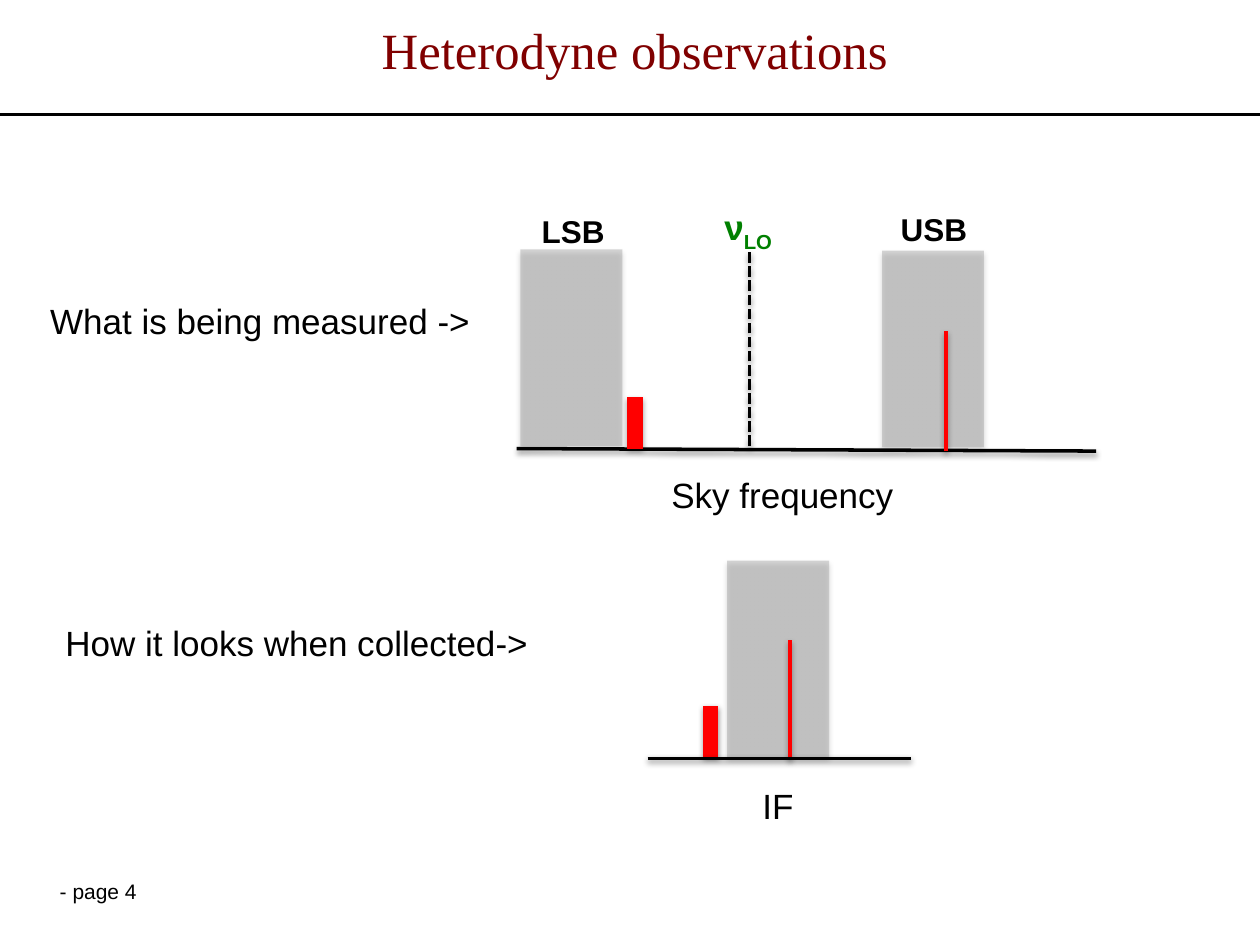
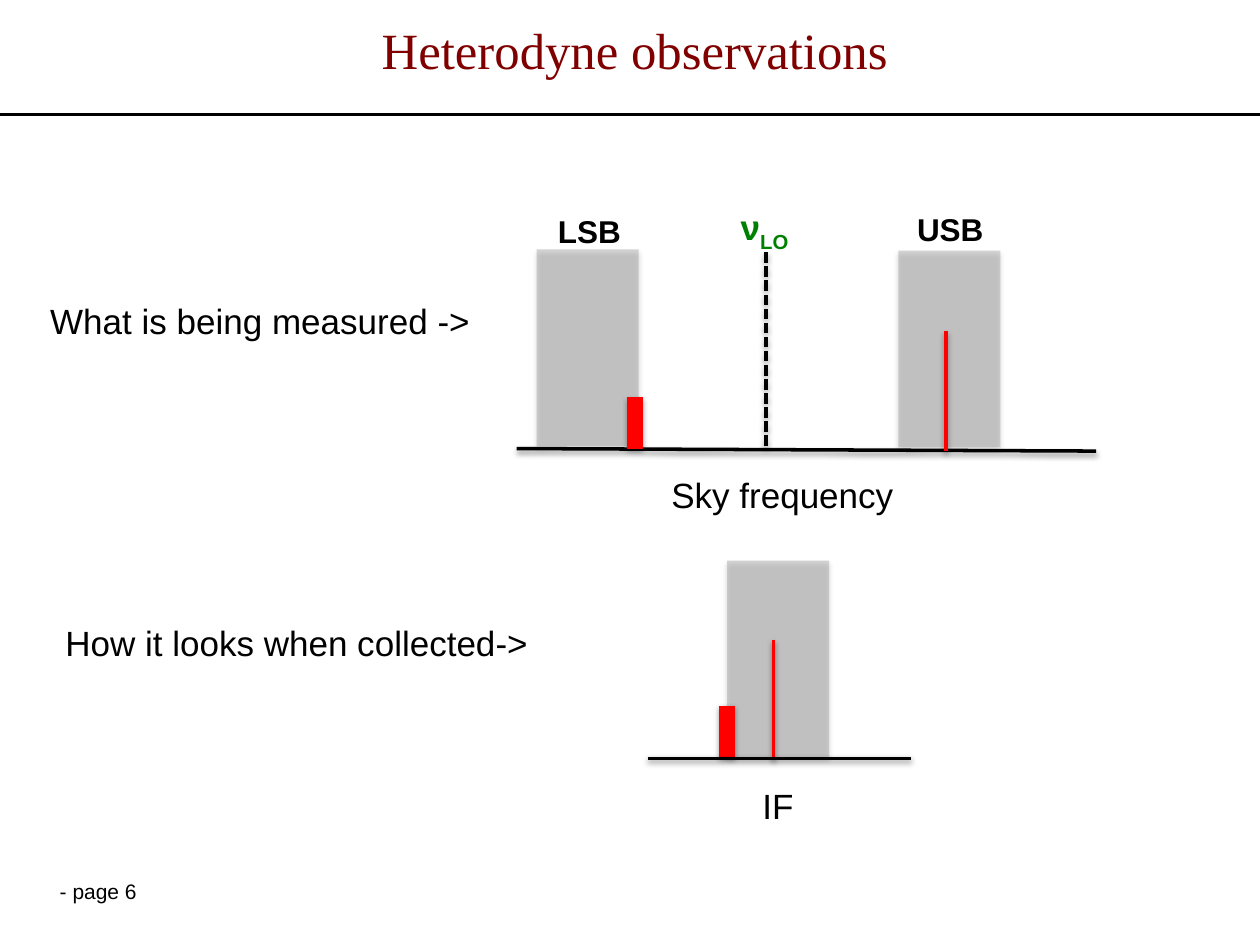
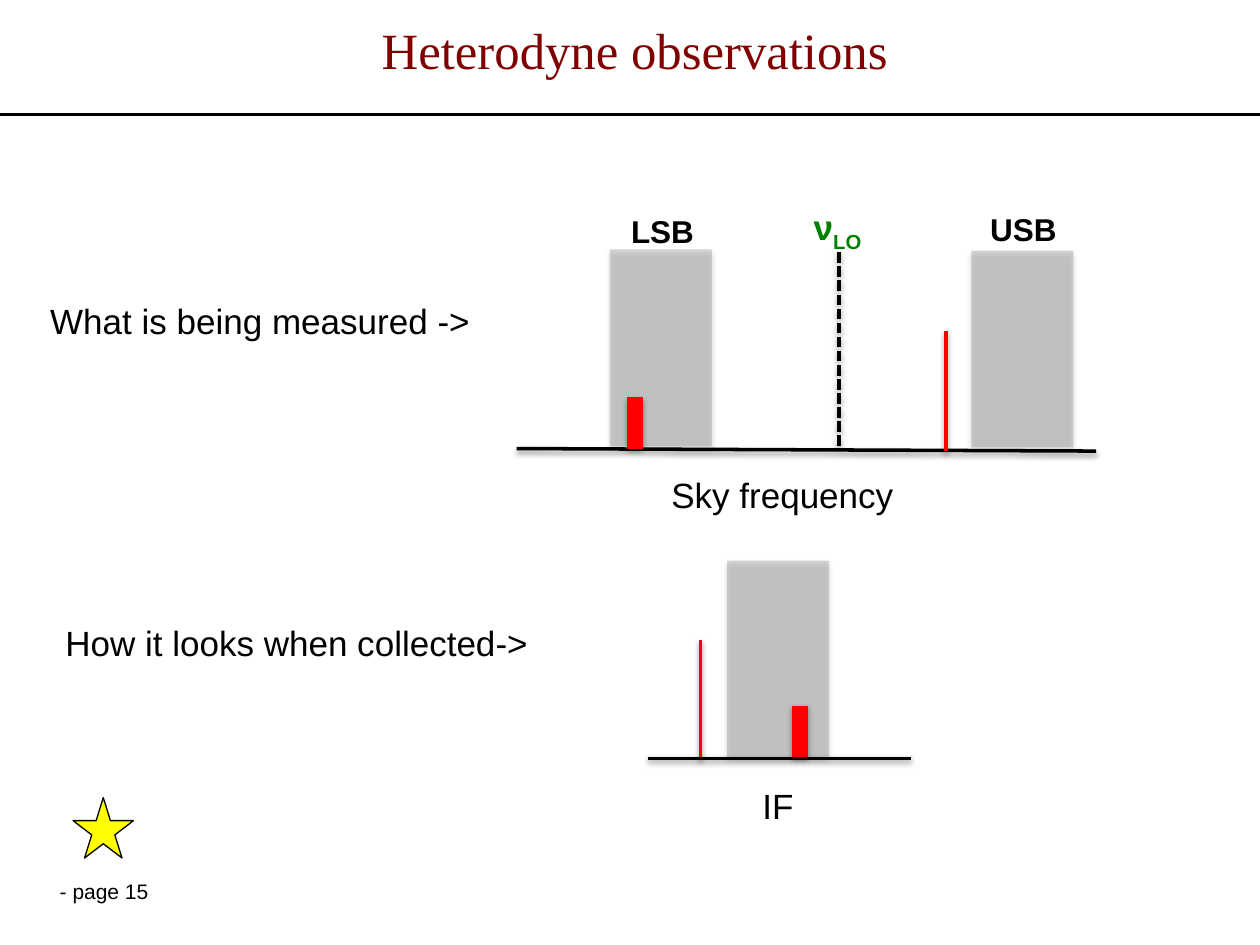
"""Build three slides that step a heterodyne receiver through local oscillator settings."""
from typing import NamedTuple

from lxml.etree import SubElement
from pptx import Presentation
from pptx.dml.color import RGBColor
from pptx.enum.dml import MSO_LINE
from pptx.enum.shapes import MSO_CONNECTOR as Connector, MSO_SHAPE as Preset
from pptx.enum.text import MSO_ANCHOR as Anchor, MSO_AUTO_SIZE as AutoSize, PP_ALIGN as Align
from pptx.oxml.ns import qn
from pptx.util import Inches, Pt

BLACK = RGBColor(0x00, 0x00, 0x00)
RED = RGBColor(0xFF, 0x00, 0x00)
GREEN = RGBColor(0x00, 0x80, 0x00)
MAROON = RGBColor(0x80, 0x00, 0x00)
GREY = RGBColor(0xA6, 0xA6, 0xA6)
YELLOW = RGBColor(0xFF, 0xFF, 0x00)
BODY_FONT = "Arial"
TITLE_FONT = "Times New Roman"
TITLE_ONLY = 5
BAND_WIDTH, BAND_HEIGHT = 0.81, 1.56


class Label(NamedTuple):
    text: str
    left: float
    top: float
    width: float
    height: float = 0.44
    size: int = 20
    color: RGBColor = BLACK
    bold: bool = False
    align: Align = Align.LEFT
    wrap: bool = False


class Stroke(NamedTuple):
    x1: float
    y1: float
    x2: float
    y2: float
    color: RGBColor = BLACK
    width: float = 2
    dashed: bool = False
    shadow: bool = True


class Tuning(NamedTuple):
    page: int
    shift: float
    starred: bool = False


TUNINGS = [Tuning(4, 0), Tuning(6, 0.13), Tuning(15, 0.71, starred=True)]

CAPTIONS = [
    Label("What is being measured ->", 0.3, 2.33, 3.56),
    Label("How it looks when collected->", 0.42, 4.88, 3.9),
    Label("IF", 5.75, 6.18, 0.85, align=Align.CENTER, wrap=True),
    Label("Sky frequency", 4.23, 3.71, 3.96, align=Align.CENTER, wrap=True),
]
SIDEBAND_LABELS = [
    Label("LSB", 4.2, 1.63, 0.71, 0.4, 18, bold=True),
    Label("USB", 7.05, 1.62, 0.73, 0.4, 18, bold=True),
]
OSCILLATOR_LABEL = Label("ν", 5.65, 1.58, 0.81, color=GREEN, bold=True, wrap=True)
OSCILLATOR = Stroke(5.95, 3.54, 5.95, 1.98, dashed=True)
SKY_AXIS = Stroke(4.1, 3.56, 8.7, 3.58)
IF_AXIS = Stroke(5.14, 6.02, 7.23, 6.02)
HEADER_RULE = Stroke(0, 0.91, 10, 0.91, width=1.5, shadow=False)


def style_run(run, size: int, color: RGBColor, font: str = BODY_FONT, bold: bool = False) -> None:
    """Give a run its font, size, weight and colour."""
    run.font.name = font
    run.font.size = Pt(size)
    run.font.bold = bold
    run.font.color.rgb = color


def set_effects(shape, opacity: int = 0, distance: int = 0) -> None:
    """Replace the theme effects by a soft drop shadow, or by none."""
    effects = SubElement(shape._element.spPr, qn("a:effectLst"))
    if opacity:
        shadow = SubElement(effects, qn("a:outerShdw"), blurRad="40000", dist=str(distance),
                            dir="5400000", rotWithShape="0")
        color = SubElement(shadow, qn("a:srgbClr"), val=str(BLACK))
        SubElement(color, qn("a:alpha"), val=str(opacity * 1000))


def add_label(shapes, label: Label):
    """Draw a label and return its paragraph."""
    box = shapes.add_textbox(Inches(label.left), Inches(label.top),
                             Inches(label.width), Inches(label.height))
    frame = box.text_frame
    frame.text = label.text
    frame.word_wrap = label.wrap
    frame.auto_size = AutoSize.SHAPE_TO_FIT_TEXT
    paragraph = frame.paragraphs[0]
    paragraph.alignment = label.align
    style_run(paragraph.runs[0], label.size, label.color, bold=label.bold)
    return paragraph


def add_stroke(shapes, stroke: Stroke) -> None:
    """Draw a straight line."""
    line = shapes.add_connector(Connector.STRAIGHT, Inches(stroke.x1), Inches(stroke.y1),
                                Inches(stroke.x2), Inches(stroke.y2))
    line.line.color.rgb = stroke.color
    line.line.width = Pt(stroke.width)
    if stroke.dashed:
        line.line.dash_style = MSO_LINE.SQUARE_DOT
    set_effects(line, 38 if stroke.shadow else 0, 20000)


def add_band(shapes, left: float, top: float) -> None:
    """Draw a translucent receiver band."""
    band = shapes.add_shape(Preset.RECTANGLE, Inches(left), Inches(top),
                            Inches(BAND_WIDTH), Inches(BAND_HEIGHT))
    band.fill.solid()
    band.fill.fore_color.rgb = GREY
    color = band._element.spPr.find(qn("a:solidFill")).find(qn("a:srgbClr"))
    SubElement(color, qn("a:alpha"), val="46000")
    band.line.fill.background()
    set_effects(band, 35, 23000)


def add_spectral_lines(shapes, broad_x: float, narrow_x: float, base: float) -> None:
    """Draw the broad and the narrow spectral line above an axis."""
    add_stroke(shapes, Stroke(broad_x, base, broad_x, base - 0.41, RED, 9))
    add_stroke(shapes, Stroke(narrow_x, base + 0.02, narrow_x, base - 0.93, RED))


def add_sidebands(shapes, shift: float) -> None:
    """Draw the oscillator with its two sidebands, moved along the sky axis."""
    group = shapes.add_group_shape()
    add_band(group.shapes, 4.13, 1.98)
    add_band(group.shapes, 7, 1.99)
    add_stroke(group.shapes, OSCILLATOR)
    for label in SIDEBAND_LABELS:
        add_label(group.shapes, label)
    subscript = add_label(group.shapes, OSCILLATOR_LABEL).add_run()
    subscript.text = "LO"
    style_run(subscript, 20, GREEN, bold=True)
    subscript._r.get_or_add_rPr().set("baseline", "-25000")
    group.left += Inches(shift)


def add_star(shapes) -> None:
    """Draw the marker star."""
    star = shapes.add_shape(Preset.STAR_5_POINT, Inches(0.58), Inches(6.33),
                            Inches(0.48), Inches(0.48))
    star.fill.solid()
    star.fill.fore_color.rgb = YELLOW
    star.line.color.rgb = BLACK
    star.line.width = Pt(0.75)
    star.shadow.inherit = False


def add_frame(slide, page: int) -> None:
    """Draw the title, header rule and page number."""
    title = slide.shapes.title
    title.left, title.top = Inches(2.33), Inches(0)
    title.width, title.height = Inches(5.42), Inches(0.78)
    frame = title.text_frame
    frame.text = "Heterodyne observations"
    frame.auto_size = AutoSize.NONE
    frame.vertical_anchor = Anchor.MIDDLE
    frame.paragraphs[0].alignment = Align.CENTER
    style_run(frame.paragraphs[0].runs[0], 29, MAROON, TITLE_FONT)
    add_stroke(slide.shapes, HEADER_RULE)
    add_label(slide.shapes, Label(f" - page {page}", 0.33, 6.92, 1, 0.35, 12))


def add_tuning_slide(prs, tuning: Tuning) -> None:
    """Build one slide for an oscillator setting."""
    slide = prs.slides.add_slide(prs.slide_layouts[TITLE_ONLY])
    shapes = slide.shapes
    add_frame(slide, tuning.page)
    add_sidebands(shapes, tuning.shift)
    for caption in CAPTIONS:
        add_label(shapes, caption)
    add_stroke(shapes, SKY_AXIS)
    add_spectral_lines(shapes, 5.04, 7.51, 3.56)
    add_band(shapes, 5.77, 4.45)
    add_spectral_lines(shapes, 5.64 + tuning.shift, 6.27 - tuning.shift, 6.01)
    add_stroke(shapes, IF_AXIS)
    if tuning.starred:
        add_star(shapes)


def main() -> None:
    """Build and save the presentation."""
    prs = Presentation()
    prs.slide_width, prs.slide_height = Inches(10), Inches(7.5)
    for tuning in TUNINGS:
        add_tuning_slide(prs, tuning)
    prs.save("out.pptx")


if __name__ == "__main__":
    main()
